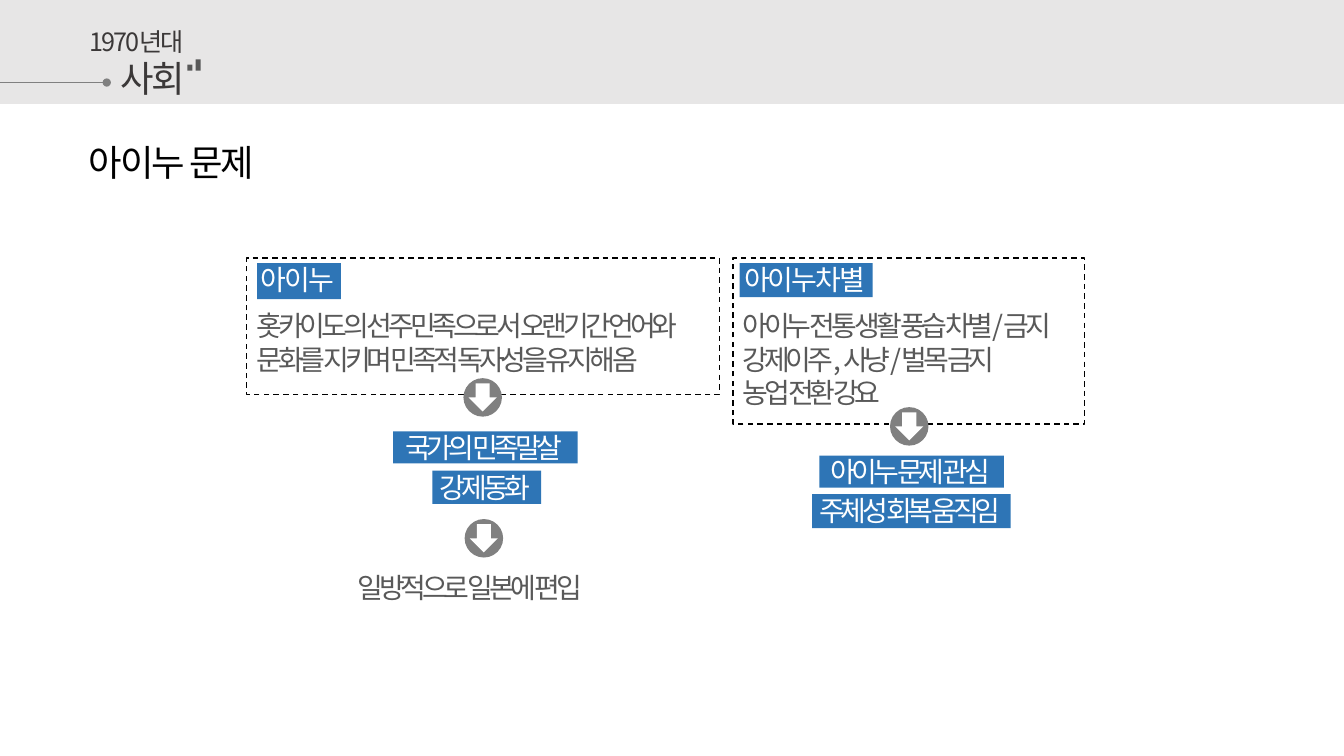
"""Builds a slide on the Ainu question in the society of the 1970s."""
from lxml import etree
from pptx import Presentation
from pptx.dml.color import RGBColor
from pptx.enum.dml import MSO_LINE
from pptx.enum.shapes import MSO_CONNECTOR, MSO_SHAPE
from pptx.enum.text import PP_ALIGN
from pptx.oxml.ns import qn
from pptx.util import Cm, Pt

RECTANGLE, OVAL, DOWN_ARROW = MSO_SHAPE.RECTANGLE, MSO_SHAPE.OVAL, MSO_SHAPE.DOWN_ARROW
STRAIGHT = MSO_CONNECTOR.STRAIGHT
DASH = MSO_LINE.DASH
LEFT, CENTER = PP_ALIGN.LEFT, PP_ALIGN.CENTER

FONT = "Noto Sans CJK KR"
BLACK = RGBColor(0x00, 0x00, 0x00)
WHITE = RGBColor(0xFF, 0xFF, 0xFF)
BAND_GRAY = RGBColor(0xE7, 0xE6, 0xE6)
MID_GRAY = RGBColor(0x80, 0x80, 0x80)
TEXT_GRAY = RGBColor(0x59, 0x59, 0x59)
HEADER_GRAY = RGBColor(0x3B, 0x38, 0x38)
BLUE = RGBColor(0x2E, 0x75, 0xB6)

TIGHT, TIGHTER = -150, -300
TEXT_SHIFT = -0.04


def add_filled(slide, kind, left, top, width, height, color):
    """Add a borderless preset shape in one colour."""
    shape = slide.shapes.add_shape(kind, Cm(left), Cm(top), Cm(width), Cm(height))
    shape.shadow.inherit = False
    shape.fill.solid()
    shape.fill.fore_color.rgb = color
    shape.line.fill.background()


def add_dashed_frame(slide, left, top, width, height):
    """Add an unfilled rectangle with a dashed border."""
    frame = slide.shapes.add_shape(RECTANGLE, Cm(left), Cm(top), Cm(width), Cm(height))
    frame.shadow.inherit = False
    frame.fill.background()
    frame.line.color.rgb = BLACK
    frame.line.width = Pt(1)
    frame.line.dash_style = DASH


def add_text(slide, left, top, width, height, lines, color,
             size=20, tracking=TIGHTER, align=LEFT, leading=None):
    """Add a wrapped text box with one paragraph per line."""
    box = slide.shapes.add_textbox(Cm(left), Cm(top), Cm(width), Cm(height))
    frame = box.text_frame
    frame.word_wrap = True
    for index, line in enumerate(lines):
        paragraph = frame.add_paragraph() if index else frame.paragraphs[0]
        paragraph.alignment = align
        paragraph.line_spacing = leading
        run = paragraph.add_run()
        run.text = line
        run.font.name = FONT
        run.font.size = Pt(size)
        run.font.color.rgb = color
        properties = run._r.get_or_add_rPr()
        properties.set("spc", str(tracking))
        etree.SubElement(properties, qn("a:ea")).set("typeface", FONT)


def add_heading(slide, left, top, width, text, color, size):
    """Add a centred heading on one line."""
    add_text(slide, left, top, width, 1, [text], color, size, TIGHT, CENTER, Pt(19.5))


def add_header_rule(slide, top, length):
    """Add the thin header line that ends in a dot."""
    rule = slide.shapes.add_connector(STRAIGHT, Cm(0), Cm(top), Cm(length), Cm(top))
    rule.line.color.rgb = MID_GRAY
    rule.line.width = Pt(0.5)
    etree.SubElement(rule.line._get_or_add_ln(), qn("a:tailEnd")).set("type", "oval")
    etree.SubElement(rule._element.spPr, qn("a:effectLst"))


def add_topic(slide, left, width, height, label, label_at, body_width, body):
    """Add a dashed frame with a blue label and explanatory text."""
    label_left, label_width, label_height = label_at
    add_filled(slide, RECTANGLE, label_left, 6.63, label_width, label_height, BLUE)
    text_width = label_width + 1
    add_heading(slide, label_left - 0.5 + TEXT_SHIFT, 6.65, text_width, label, WHITE, 20)
    add_dashed_frame(slide, left, 6.5, width, height)
    add_text(slide, left, 7.65, body_width, 2, body, TEXT_GRAY)


def add_step_arrow(slide, left, top):
    """Add a gray disc holding a white down arrow."""
    disc, arrow = 0.97, 0.71
    inset = (disc - arrow) / 2
    add_filled(slide, OVAL, left, top, disc, disc, MID_GRAY)
    add_filled(slide, DOWN_ARROW, left + inset, top + inset, arrow, arrow, WHITE)


def add_tag(slide, left, top, width, height, text):
    """Add a blue bar with white text centred over it."""
    text_width, text_height = 8.26, 1.12
    add_filled(slide, RECTANGLE, left, top, width, height, BLUE)
    add_text(slide, left + (width - text_width) / 2 + TEXT_SHIFT,
             top + (height - text_height) / 2, text_width, text_height,
             [text], WHITE, align=CENTER)


def add_header(slide):
    """Add the gray band with the decade and the subject."""
    add_filled(slide, RECTANGLE, 0, 0, 33.87, 2.62, BAND_GRAY)
    add_header_rule(slide, 2.08, 2.69)
    add_heading(slide, 2.69, 1.7, 2.31, "사회", HEADER_GRAY, 26)
    add_heading(slide, 1.24, 0.61, 4.42, "1970년대", HEADER_GRAY, 18)
    add_filled(slide, RECTANGLE, 4.93, 1.5, 0.13, 0.28, TEXT_GRAY)
    add_filled(slide, RECTANGLE, 4.72, 1.63, 0.13, 0.15, TEXT_GRAY)


def main():
    """Build and save the slide."""
    deck = Presentation()
    deck.slide_width, deck.slide_height = Cm(33.87), Cm(19.05)
    slide = deck.slides.add_slide(deck.slide_layouts[6])

    add_header(slide)
    add_heading(slide, 1.78, 3.81, 5.08, "아이누 문제", BLACK, 26)

    add_topic(slide, 6.22, 11.91, 3.45, "아이누", (6.48, 2.11, 0.91), 11.94,
              ["홋카이도의 선주민족으로서 오랜기간 언어와 문화를 지키며 민족적 독자성을 유지해 옴"])
    add_step_arrow(slide, 11.68, 9.53)
    add_tag(slide, 9.91, 10.87, 4.65, 0.81, "국가의 민족말살")
    add_tag(slide, 10.9, 11.86, 2.74, 0.84, "강제동화")
    add_step_arrow(slide, 11.71, 13.08)
    add_text(slide, 8.76, 14.25, 6.88, 1.12, ["일방적으로 일본에 편입"], TEXT_GRAY)

    add_topic(slide, 18.47, 8.86, 4.19, "아이누차별", (18.64, 3.35, 0.86), 10.62,
              ["아이누 전통 생활 풍습 차별/금지", "강제이주, 사냥/벌목 금지", "농업 전환 강요"])
    add_step_arrow(slide, 22.43, 10.26)
    add_tag(slide, 20.65, 11.48, 4.65, 0.81, "아이누 문제 관심")
    add_tag(slide, 20.47, 12.45, 5, 0.86, "주체성 회복 움직임")

    deck.save("out.pptx")


if __name__ == "__main__":
    main()
